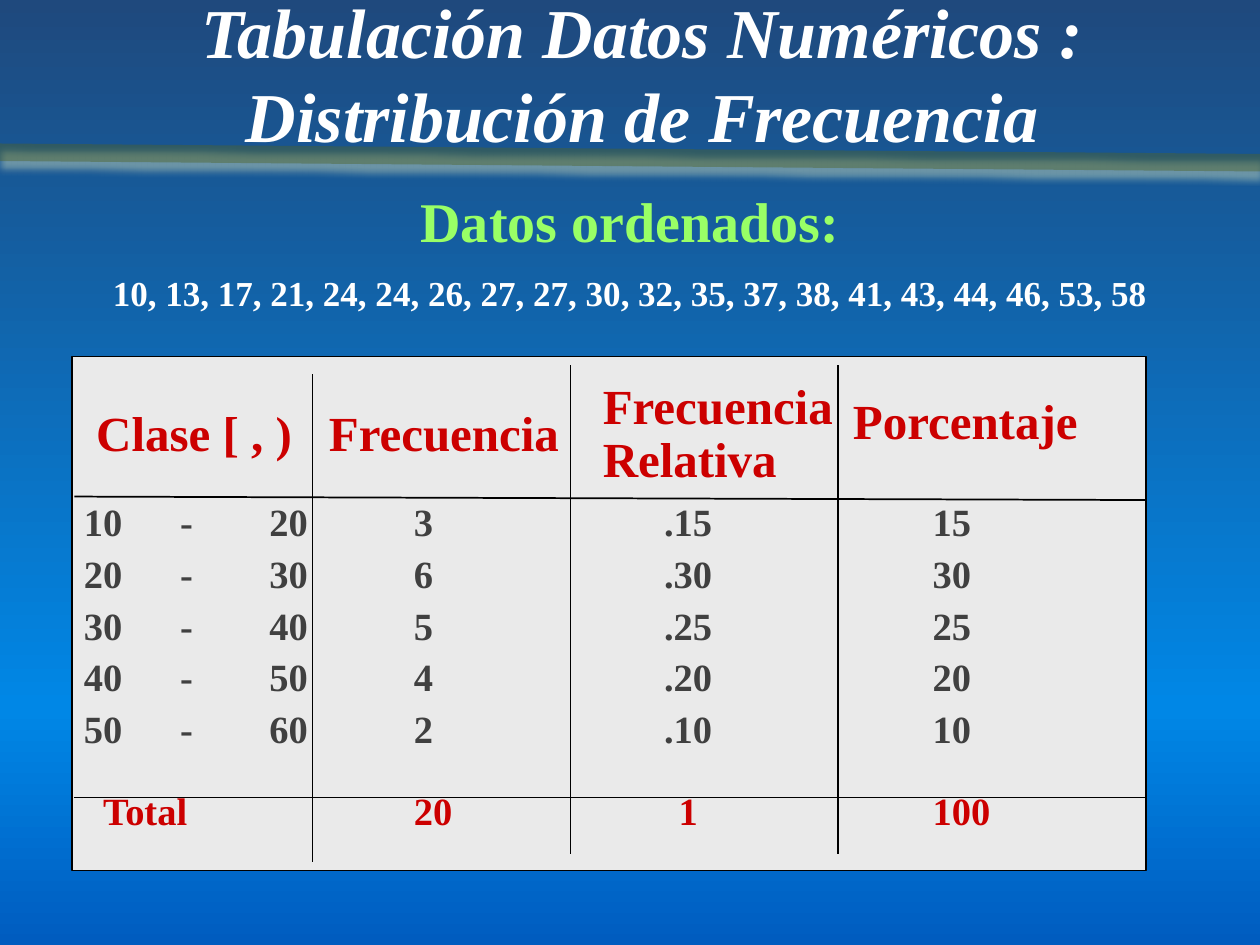
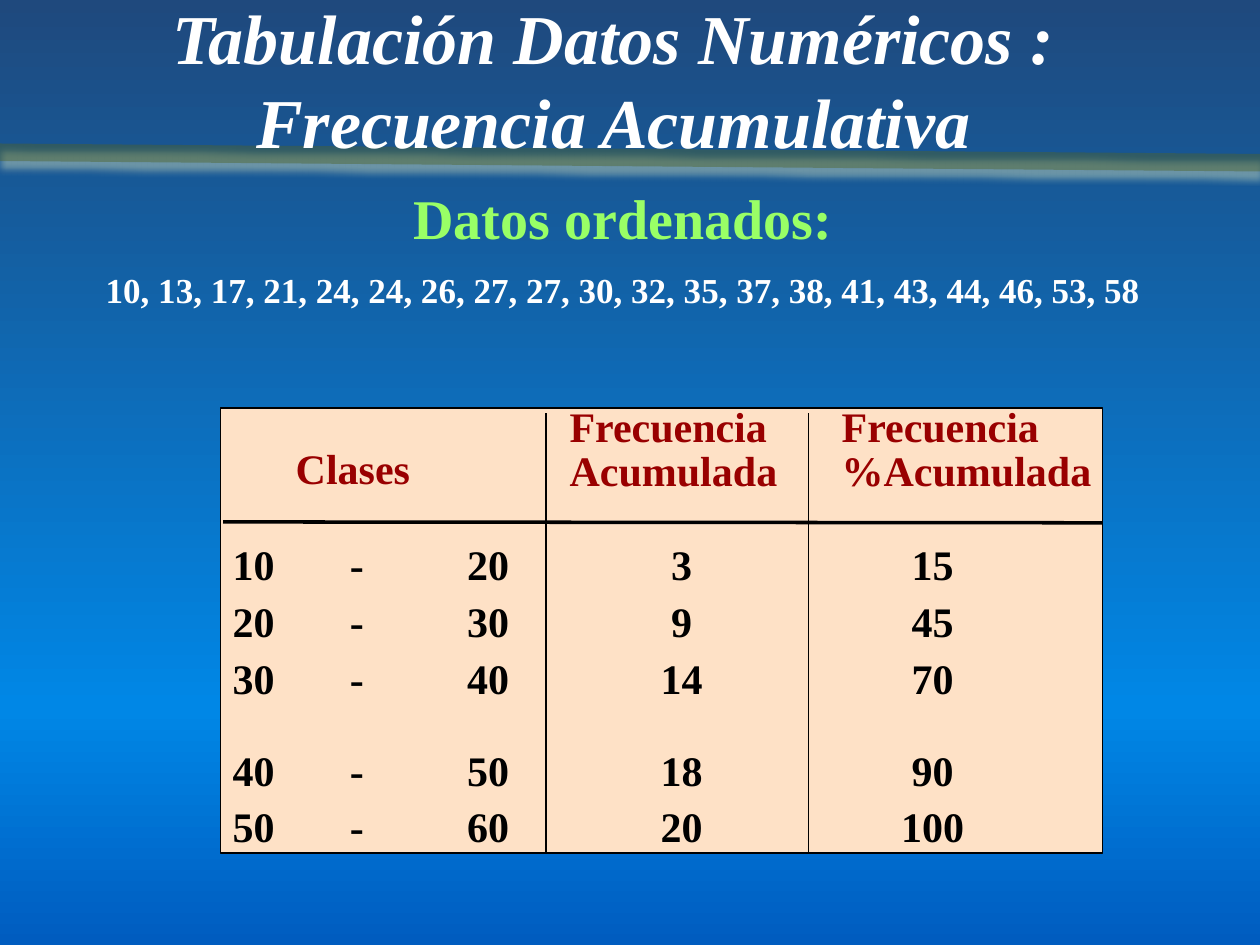
from dataclasses import dataclass
from itertools import pairwise

from lxml import etree
from pptx import Presentation
from pptx.dml.color import RGBColor
from pptx.enum.shapes import MSO_CONNECTOR, MSO_SHAPE
from pptx.enum.text import MSO_ANCHOR, PP_ALIGN
from pptx.oxml import parse_xml
from pptx.oxml.ns import nsdecls, qn
from pptx.util import Pt

LEFT, CENTER = PP_ALIGN.LEFT, PP_ALIGN.CENTER
TOP, BOTTOM = MSO_ANCHOR.TOP, MSO_ANCHOR.BOTTOM
RECTANGLE = MSO_SHAPE.RECTANGLE
STRAIGHT = MSO_CONNECTOR.STRAIGHT
PLAIN_TABLE_STYLE = "{2D5ABB26-0587-4C30-8999-92F81FD0307C}"
ORDERED_DATA = "10, 13, 17, 21, 24, 24, 26, 27, 27, 30, 32, 35, 37, 38, 41, 43, 44, 46, 53, 58"


@dataclass(frozen=True)
class Theme:
    font: str = "Times New Roman"
    gradient: tuple = ((0, "1F497D"), (75, "0087E6"), (100, "005CBF"))
    band: str = "4F6228"
    band_shadow: str = "D7E4BD"
    white: str = "FFFFFF"
    black: str = "000000"
    subtitle: str = "99FF66"
    title_size: int = 40
    subtitle_size: int = 32
    data_size: int = 20


THEME = Theme()


@dataclass(frozen=True)
class Column:
    width: float
    header: str
    header_left: float
    header_top: float
    align: PP_ALIGN = LEFT
    left: float = 0
    right: float = 0


@dataclass(frozen=True)
class Grid:
    fill: str
    accent: str
    body_color: str
    header_size: int
    body_size: int
    header_spacing: float
    columns: tuple
    row_heights: tuple
    rows: tuple
    tabs: tuple
    vertical_rules: tuple
    horizontal_rules: tuple
    horizontal_width: float
    total_indent: float = 0


FREQUENCY = Grid(
    fill="EAEAEA", accent="CC0000", body_color="404040",
    header_size=28, body_size=22, header_spacing=30,
    columns=(
        Column(137.5, "Clase [ , )", 14, 30, left=7),
        Column(147.5, "Frecuencia", 9.5, 30, left=58),
        Column(153, "Frecuencia\nRelativa", 18.5, 15, CENTER, right=18.5),
        Column(176, "Porcentaje", 8.5, 23.5, left=54),
    ),
    row_heights=(78,) + (29.6,) * 5 + (47,),
    rows=(
        ("10\t-\t20", "3", ".15", "15"),
        ("20\t-\t30", "6", ".30", "30"),
        ("30\t-\t40", "5", ".25", "25"),
        ("40\t-\t50", "4", ".20", "20"),
        ("50\t-\t60", "2", ".10", "10"),
        ("Total", "20", "1", "100"),
    ),
    tabs=(55, 106),
    vertical_rules=((10, 289), (5, 284.5), (5, 284.5)),
    horizontal_rules=((80, 82), (252, 252)),
    horizontal_width=1,
    total_indent=11,
)

CUMULATIVE = Grid(
    fill="FEE1C6", accent="990000", body_color="000000",
    header_size=24, body_size=24, header_spacing=25,
    columns=(
        Column(186, "Clases", 43, 24, left=7),
        Column(150, "Frecuencia\nAcumulada", 13.5, 0, CENTER, left=5),
        Column(168, "Frecuencia\n%Acumulada", 19, 0, CENTER, right=26),
    ),
    row_heights=(71.5, 32.4, 32.4, 32.4, 52.4, 32.4),
    rows=(
        ("10\t-\t20", "3", "15"),
        ("20\t-\t30", "9", "45"),
        ("30\t-\t40", "14", "70"),
        ("40\t-\t50", "18", "90"),
        ("50\t-\t60", "20", "100"),
    ),
    tabs=(67, 134),
    vertical_rules=((3, 254),) * 2,
    horizontal_rules=((65, 65.5),),
    horizontal_width=2,
)


def color(value):
    return RGBColor.from_string(value)


def format_paragraph(paragraph, text, *, size, fill, italic=False, align=LEFT,
                     before=0, spacing=None, tabs=()):
    paragraph.alignment = align
    paragraph.space_before = Pt(before)
    if spacing:
        paragraph.line_spacing = Pt(spacing)
    run = paragraph.add_run()
    run.text = text
    font = run.font
    font.name, font.size, font.bold, font.italic = THEME.font, Pt(size), True, italic
    font.color.rgb = color(fill)
    if tabs:
        properties = paragraph._p.get_or_add_pPr()
        tab_list = etree.SubElement(properties, qn("a:tabLst"))
        for position in tabs:
            etree.SubElement(tab_list, qn("a:tab"), pos=str(Pt(position)), algn="l")


def write_text(text_frame, text, **formats):
    for index, line in enumerate(text.split("\n")):
        paragraph = text_frame.add_paragraph() if index else text_frame.paragraphs[0]
        format_paragraph(paragraph, line, **formats)


def add_text_box(slide, box):
    text_frame = slide.shapes.add_textbox(*map(Pt, box)).text_frame
    text_frame.word_wrap = True
    return text_frame


def add_line(slide, start, end, fill, width, effects=""):
    connector = slide.shapes.add_connector(STRAIGHT, *map(Pt, (*start, *end)))
    connector.line.width = Pt(width)
    connector.line.color.rgb = color(fill)
    connector._element.spPr.append(
        parse_xml(f"<a:effectLst {nsdecls('a')}>{effects}</a:effectLst>"))
    return connector


def set_background(master):
    fill = master.background.fill
    fill.gradient()
    fill.gradient_angle = 270
    stops = next(master.element.iter(qn("a:gsLst")))
    for stop in list(stops):
        stops.remove(stop)
    for position, value in THEME.gradient:
        stop = etree.SubElement(stops, qn("a:gs"), pos=str(position * 1000))
        etree.SubElement(stop, qn("a:srgbClr"), val=value)


def add_band(slide):
    shadow = (f'<a:outerShdw blurRad="{Pt(4)}" dist="{Pt(4)}" dir="5400000">'
              f'<a:srgbClr val="{THEME.band_shadow}"/></a:outerShdw>')
    band = add_line(slide, (0, 87), (720, 93), THEME.band, 10, shadow)
    band_color = next(band._element.iter(qn("a:srgbClr")))
    etree.SubElement(band_color, qn("a:alpha"), val="44000")


def add_heading(slide, title, title_box, data_box):
    write_text(add_text_box(slide, title_box), title, size=THEME.title_size,
               fill=THEME.white, italic=True, align=CENTER)
    data_frame = add_text_box(slide, data_box)
    write_text(data_frame, "Datos ordenados:", size=THEME.subtitle_size,
               fill=THEME.subtitle, align=CENTER)
    format_paragraph(data_frame.add_paragraph(), ORDERED_DATA, size=THEME.data_size,
                     fill=THEME.white, align=CENTER, before=10)


def fill_cell(cell, text, anchor, left, top, right, **formats):
    cell.vertical_anchor = anchor
    cell.margin_left, cell.margin_top = Pt(left), Pt(top)
    cell.margin_right, cell.margin_bottom = Pt(right), 0
    cell.fill.background()
    write_text(cell.text_frame, text, **formats)


def add_grid_table(slide, box, grid):
    left, top, width, _ = box
    frame = slide.shapes.add_table(len(grid.row_heights), len(grid.columns), Pt(left),
                                   Pt(top), Pt(width), Pt(sum(grid.row_heights)))
    table = frame.table
    table.first_row = table.horz_banding = False
    next(table._tbl.iter(qn("a:tableStyleId"))).text = PLAIN_TABLE_STYLE
    for row, height in zip(table.rows, grid.row_heights):
        row.height = Pt(height)
    for index, column in enumerate(grid.columns):
        table.columns[index].width = Pt(column.width)
        fill_cell(table.cell(0, index), column.header, TOP, column.header_left,
                  column.header_top, 0, size=grid.header_size, fill=grid.accent,
                  spacing=grid.header_spacing)
        for number, values in enumerate(grid.rows, 1):
            is_total = values[0] == "Total"
            indent = grid.total_indent if is_total and index == 0 else 0
            fill_cell(table.cell(number, index), values[index], BOTTOM,
                      column.left + indent, 0, column.right, size=grid.body_size,
                      fill=grid.accent if is_total else grid.body_color,
                      align=column.align, tabs=grid.tabs if "\t" in values[index] else ())


def add_grid(slide, box, grid):
    left, top, width, _ = box
    panel = slide.shapes.add_shape(RECTANGLE, *map(Pt, box))
    panel.shadow.inherit = False
    panel.fill.solid()
    panel.fill.fore_color.rgb = color(grid.fill)
    panel.line.color.rgb = color(THEME.black)
    panel.line.width = Pt(1)
    add_grid_table(slide, box, grid)
    for start, end in grid.horizontal_rules:
        add_line(slide, (left + 1.5, top + start), (left + width, top + end),
                 THEME.black, grid.horizontal_width)
    edge = left
    for column, (start, end) in zip(grid.columns, grid.vertical_rules):
        edge += column.width
        add_line(slide, (edge, top + start), (edge, top + end), THEME.black, 1)


def add_grid_slide(presentation, title, title_box, data_box, grid_box, grid):
    slide = presentation.slides.add_slide(presentation.slide_layouts[6])
    add_band(slide)
    add_heading(slide, title, title_box, data_box)
    add_grid(slide, grid_box, grid)


def main():
    presentation = Presentation()
    presentation.slide_width, presentation.slide_height = Pt(720), Pt(540)
    set_background(presentation.slide_master)
    add_grid_slide(presentation, "Tabulación Datos Numéricos : Distribución de Frecuencia",
                   (47, -10, 640, 104), (-1, 103, 722, 82),
                   (41, 203.75, 614, 293.75), FREQUENCY)
    add_grid_slide(presentation, "Tabulación Datos Numéricos :\nFrecuencia Acumulativa",
                   (18, -6.5, 665, 104), (34, 101.5, 644, 100),
                   (126, 233.25, 504, 254), CUMULATIVE)
    presentation.save("out.pptx")


if __name__ == "__main__":
    main()
